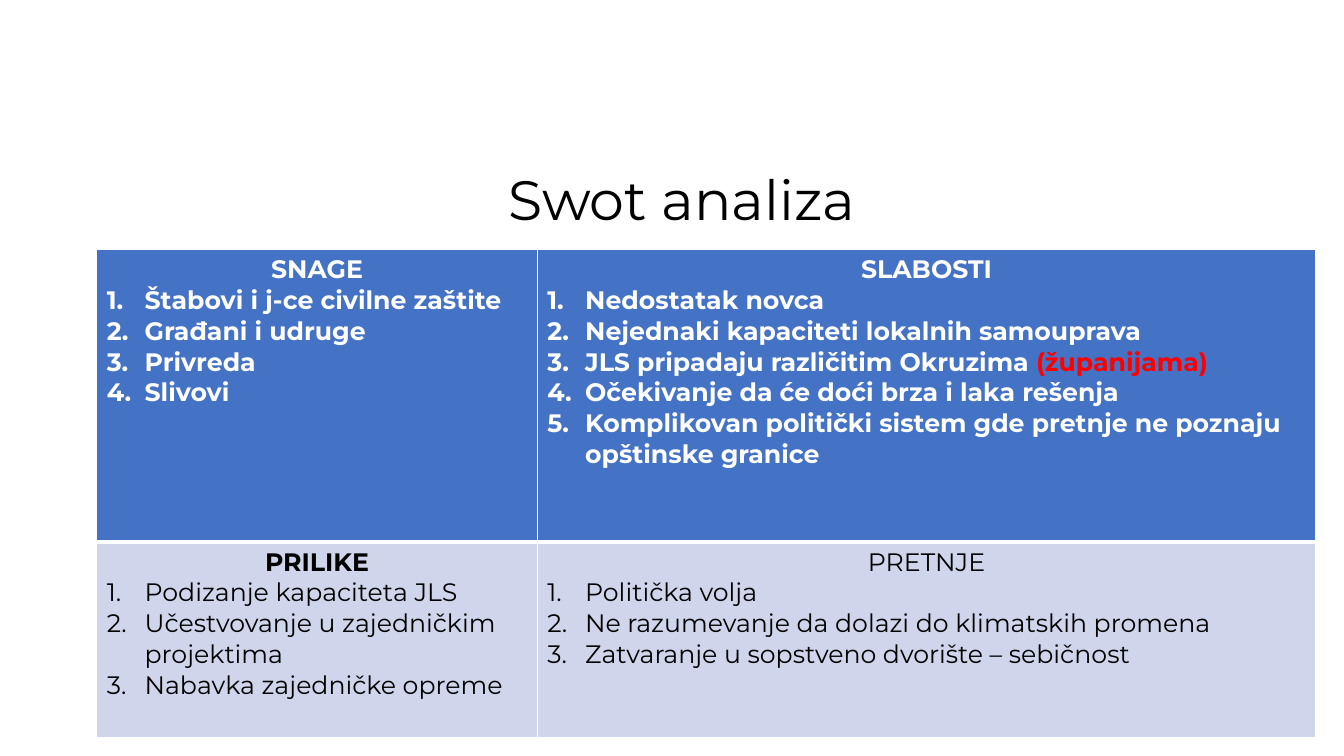
from dataclasses import dataclass

from lxml.etree import SubElement
from pptx import Presentation
from pptx.dml.color import RGBColor as Color
from pptx.enum.text import MSO_ANCHOR as Anchor, PP_ALIGN as Align
from pptx.oxml.ns import qn
from pptx.slide import Slide
from pptx.table import _Cell as Cell
from pptx.text.text import _Paragraph as Paragraph
from pptx.util import Pt

FONT = "Montserrat"
COLORS = {
    "white": "FFFFFF",
    "black": "000000",
    "red": "FF0000",
    "blue": "4472C4",
    "pale": "CFD5EA",
}
COLUMN_WIDTHS = (314.7, 556.1)
ROW_HEIGHTS = (208.8, 139.7)
NUMBER_INDENT = 27
THIN, THICK = 1, 3


@dataclass(frozen=True)
class Item:
    text: str
    highlight: str = ""


@dataclass(frozen=True)
class Quadrant:
    row: int
    column: int
    heading: str
    items: tuple[Item, ...]
    fill: str
    ink: str
    heading_bold: bool
    items_bold: bool


QUADRANTS = (
    Quadrant(0, 0, "SNAGE", (
        Item("Štabovi i j-ce civilne zaštite"),
        Item("Građani i udruge"),
        Item("Privreda"),
        Item("Slivovi"),
    ), "blue", "white", True, True),
    Quadrant(0, 1, "SLABOSTI", (
        Item("Nedostatak novca"),
        Item("Nejednaki kapaciteti lokalnih samouprava"),
        Item("JLS pripadaju različitim Okruzima ", "(županijama)"),
        Item("Očekivanje da će doći brza i laka rešenja"),
        Item("Komplikovan politički sistem gde pretnje ne poznaju opštinske granice"),
    ), "blue", "white", True, True),
    Quadrant(1, 0, "PRILIKE", (
        Item("Podizanje kapaciteta JLS"),
        Item("Učestvovanje u zajedničkim projektima"),
        Item("Nabavka zajedničke opreme"),
    ), "pale", "black", True, False),
    Quadrant(1, 1, "PRETNJE", (
        Item("Politička volja"),
        Item("Ne razumevanje da dolazi do klimatskih promena"),
        Item("Zatvaranje u sopstveno dvorište – sebičnost"),
    ), "pale", "black", False, False),
)


def format_runs(paragraph: Paragraph, size: float, color: str, bold: bool) -> None:
    for run in paragraph.runs:
        run.font.name = FONT
        run.font.size = Pt(size)
        run.font.bold = bold
        run.font.color.rgb = Color.from_string(COLORS[color])


def number_paragraph(paragraph: Paragraph) -> None:
    properties = paragraph._p.get_or_add_pPr()
    properties.set("marL", str(Pt(NUMBER_INDENT)))
    properties.set("indent", str(-Pt(NUMBER_INDENT)))
    SubElement(properties, qn("a:buFont"), typeface="+mj-lt")
    SubElement(properties, qn("a:buAutoNum"), type="arabicPeriod")


def set_borders(cell: Cell, top: float, bottom: float) -> None:
    properties = cell._tc.get_or_add_tcPr()
    for side, width in (("L", THIN), ("R", THIN), ("T", top), ("B", bottom)):
        line = SubElement(properties, qn(f"a:ln{side}"), w=str(Pt(width)))
        fill = SubElement(line, qn("a:solidFill"))
        SubElement(fill, qn("a:srgbClr"), val=COLORS["white"])


def fill_quadrant(cell: Cell, quadrant: Quadrant) -> None:
    is_upper = quadrant.row == 0
    set_borders(cell, THIN if is_upper else THICK, THICK if is_upper else THIN)
    cell.fill.solid()
    cell.fill.fore_color.rgb = Color.from_string(COLORS[quadrant.fill])
    heading = cell.text_frame.paragraphs[0]
    heading.text = quadrant.heading
    heading.alignment = Align.CENTER
    format_runs(heading, 18, quadrant.ink, quadrant.heading_bold)
    for item in quadrant.items:
        paragraph = cell.text_frame.add_paragraph()
        number_paragraph(paragraph)
        paragraph.text = item.text
        if item.highlight:
            paragraph.add_run().text = item.highlight
        format_runs(paragraph, 18, quadrant.ink, quadrant.items_bold)
        if item.highlight:
            paragraph.runs[-1].font.color.rgb = Color.from_string(COLORS["red"])


def add_title(slide: Slide, text: str) -> None:
    shape = slide.shapes.add_textbox(Pt(73.2), Pt(119.5), Pt(828), Pt(50.4))
    text_frame = shape.text_frame
    text_frame.text = text
    text_frame.word_wrap = True
    text_frame.vertical_anchor = Anchor.MIDDLE
    paragraph = text_frame.paragraphs[0]
    paragraph.alignment = Align.CENTER
    paragraph.line_spacing = 0.9
    format_runs(paragraph, 39.6, "black", False)


def add_swot_table(slide: Slide) -> None:
    table = slide.shapes.add_table(
        len(ROW_HEIGHTS), len(COLUMN_WIDTHS), Pt(69.1), Pt(178.1),
        Pt(sum(COLUMN_WIDTHS)), Pt(sum(ROW_HEIGHTS)),
    ).table
    for column, width in zip(table.columns, COLUMN_WIDTHS):
        column.width = Pt(width)
    for row, height in zip(table.rows, ROW_HEIGHTS):
        row.height = Pt(height)
    for quadrant in QUADRANTS:
        fill_quadrant(table.cell(quadrant.row, quadrant.column), quadrant)


def main() -> None:
    presentation = Presentation()
    presentation.slide_width = Pt(960)
    presentation.slide_height = Pt(540)
    slide = presentation.slides.add_slide(presentation.slide_layouts[6])
    add_title(slide, "Swot analiza")
    add_swot_table(slide)
    presentation.save("out.pptx")


if __name__ == "__main__":
    main()
